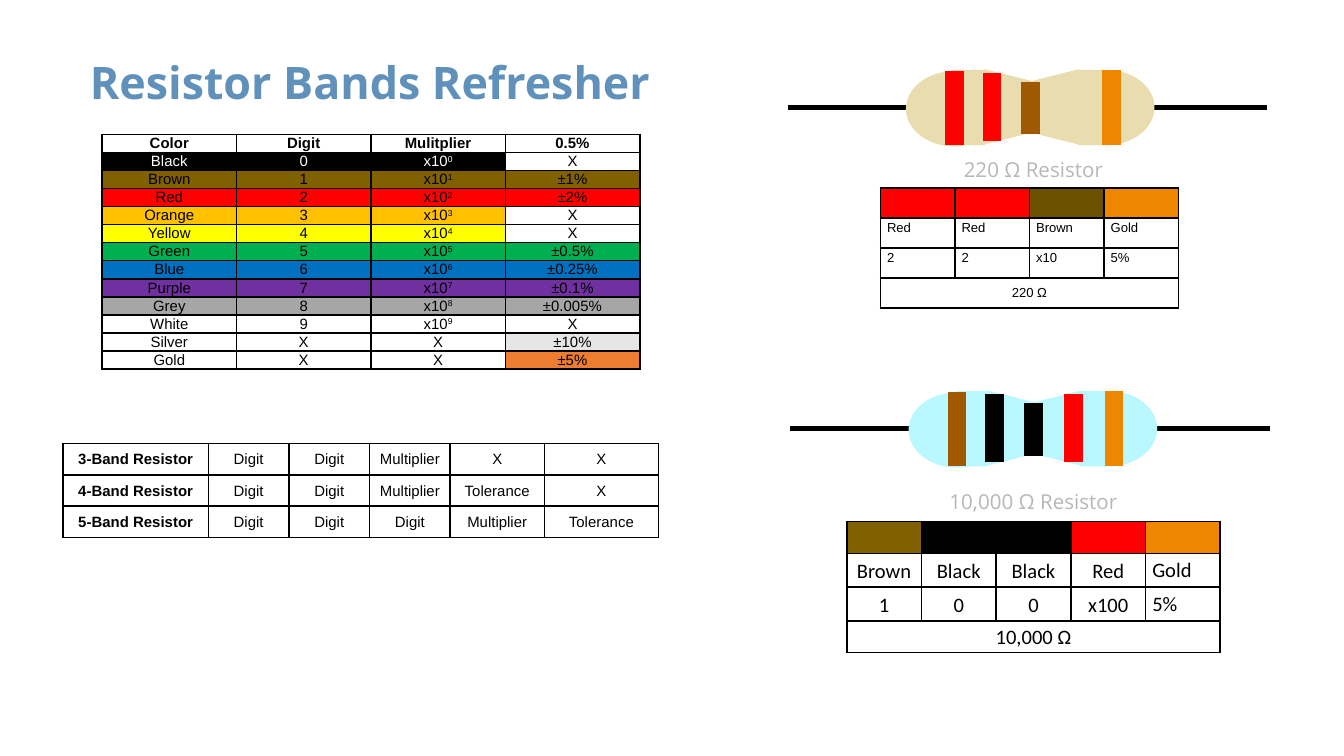
import dataclasses
import typing

import lxml.etree
import pptx
import pptx.dml.color
import pptx.enum.shapes
import pptx.enum.text
import pptx.oxml.ns
import pptx.util

Inches = pptx.util.Inches
Pt = pptx.util.Pt
qn = pptx.oxml.ns.qn
Shape = pptx.enum.shapes.MSO_SHAPE
Align = pptx.enum.text.PP_ALIGN
Anchor = pptx.enum.text.MSO_ANCHOR


class Part(typing.NamedTuple):
    kind: Shape
    left: float
    top: float
    width: float
    height: float
    rotation: int = 0


class Band(typing.NamedTuple):
    x: float
    top: float
    bottom: float


@dataclasses.dataclass
class Cell:
    text: str = ""
    fill: str | None = None
    color: str = "000000"
    bold: bool = False
    align: Align = Align.CENTER
    anchor: Anchor = Anchor.MIDDLE


@dataclasses.dataclass
class Grid:
    left: float
    top: float
    columns: list[float]
    heights: list[float]
    cells: list[list[Cell]]
    size: float
    font: str = "Arial"
    spacing: float = 1.07
    margins: tuple[float, float] = (0.07, 0)
    merge_last: bool = False


@dataclasses.dataclass
class Resistor:
    dx: float
    dy: float
    body: str
    bands: dict[str, str]


BODY = [
    Part(Shape.FLOWCHART_DELAY, 8.02, 0.52, 0.42, 0.56),
    Part(Shape.TRAPEZOID, 7.57, 0.62, 0.56, 0.35, 270),
    Part(Shape.TRAPEZOID, 7.22, 0.62, 0.56, 0.35, 90),
    Part(Shape.FLOWCHART_DELAY, 6.91, 0.52, 0.42, 0.56, 180),
    Part(Shape.OVAL, 7.87, 0.52, 0.72, 0.56),
    Part(Shape.OVAL, 6.74, 0.53, 0.72, 0.56),
]
SLOTS = {
    "first": Band(7.1, 0.53, 1.08),
    "second": Band(7.38, 0.54, 1.05),
    "third": Band(7.67, 0.61, 1),
    "fourth": Band(7.97, 0.54, 1.05),
    "last": Band(8.27, 0.52, 1.08),
}
RESISTORS = [
    Resistor(0, 0, "E9DDAF", {"first": "FF0000", "second": "FF0000", "third": "A05900", "last": "EF8600"}),
    Resistor(0.02, 2.39, "BAF8FF", {"first": "A05900", "second": "000000", "third": "000000",
                                    "last": "EF8600", "fourth": "FF0000"}),
]
CODES = [
    ("Black", "000000", "X"), ("Brown", "806000", "±1%"), ("Red", "FF0000", "±2%"),
    ("Orange", "FFC000", "X"), ("Yellow", "FFFF00", "X"), ("Green", "00B050", "±0.5%"),
    ("Blue", "0070C0", "±0.25%"), ("Purple", "7030A0", "±0.1%"), ("Grey", "A6A6A6", "±0.005%"),
    ("White", None, "X"),
]
METALS = [("Silver", "E7E6E6", "±10%"), ("Gold", "ED7D31", "±5%")]
LAYOUTS = [
    ["3-Band Resistor", "Digit", "Digit", "Multiplier", "X", "X"],
    ["4-Band Resistor", "Digit", "Digit", "Multiplier", "Tolerance", "X"],
    ["5-Band Resistor", "Digit", "Digit", "Digit", "Multiplier", "Tolerance"],
]


def rgb(value: str) -> pptx.dml.color.RGBColor:
    return pptx.dml.color.RGBColor.from_string(value)


def write(frame, text: str, *, size: float, font: str, color: str, bold: bool = False,
          align: Align = Align.LEFT, spacing: float = 1.15) -> None:
    """Write one paragraph, raising whatever follows a caret."""
    paragraph = frame.paragraphs[0]
    paragraph.alignment = align
    paragraph.line_spacing = spacing
    if not text:
        lxml.etree.SubElement(paragraph._p, qn("a:endParaRPr"), sz=str(int(size * 100)))
        return
    for index, piece in enumerate(text.split("^")):
        run = paragraph.add_run()
        run.text = piece
        run.font.size = Pt(size)
        run.font.name = font
        run.font.bold = bold
        run.font.color.rgb = rgb(color)
        if index:
            run.font._element.set("baseline", "30000")


def add_text(slide, left: float, top: float, width: float, height: float, text: str, **style) -> None:
    frame = slide.shapes.add_textbox(Inches(left), Inches(top), Inches(width), Inches(height)).text_frame
    frame.word_wrap = True
    frame.margin_left = frame.margin_right = frame.margin_top = frame.margin_bottom = Inches(0.1)
    write(frame, text, font="Open Sans", **style)


def add_line(shapes, start: tuple[float, float], end: tuple[float, float], color: str, width: float) -> None:
    line = shapes.add_connector(pptx.enum.shapes.MSO_CONNECTOR.STRAIGHT, *map(Inches, start + end))
    line.line.color.rgb = rgb(color)
    line.line.width = Pt(width)
    lxml.etree.SubElement(line._element.spPr, qn("a:effectLst"))


def add_resistor(slide, resistor: Resistor) -> None:
    shapes = slide.shapes.add_group_shape().shapes
    dx, dy = resistor.dx, resistor.dy
    add_line(shapes, (5.86 + dx, 0.8 + dy), (9.43 + dx, 0.8 + dy), "000000", 3)
    for part in BODY:
        shape = shapes.add_shape(part.kind, Inches(part.left + dx), Inches(part.top + dy),
                                 Inches(part.width), Inches(part.height))
        shape.rotation = part.rotation
        shape.shadow.inherit = False
        shape.fill.solid()
        shape.fill.fore_color.rgb = rgb(resistor.body)
        shape.line.fill.background()
    for slot, color in resistor.bands.items():
        band = SLOTS[slot]
        add_line(shapes, (band.x + dx, band.top + dy), (band.x + dx, band.bottom + dy), color, 10)


def style_cell(cell, content: Cell, grid: Grid) -> None:
    cell.margin_left = cell.margin_right = Inches(grid.margins[0])
    cell.margin_top = cell.margin_bottom = Inches(grid.margins[1])
    cell.vertical_anchor = content.anchor
    properties = cell._tc.get_or_add_tcPr()
    for side in ("lnL", "lnR", "lnT", "lnB"):
        border = lxml.etree.SubElement(properties, qn(f"a:{side}"), w=str(Pt(1)))
        solid = lxml.etree.SubElement(border, qn("a:solidFill"))
        lxml.etree.SubElement(solid, qn("a:srgbClr"), val="000000")
    if content.fill:
        cell.fill.solid()
        cell.fill.fore_color.rgb = rgb(content.fill)
    else:
        cell.fill.background()
    write(cell.text_frame, content.text, size=grid.size, font=grid.font, color=content.color,
          bold=content.bold, align=content.align, spacing=grid.spacing)


def add_grid(slide, grid: Grid) -> None:
    table = slide.shapes.add_table(len(grid.heights), len(grid.columns), Inches(grid.left), Inches(grid.top),
                                   Inches(sum(grid.columns)), Inches(sum(grid.heights))).table
    table.first_row = table.horz_banding = False
    for column, width in zip(table.columns, grid.columns):
        column.width = Inches(width)
    for row, height, contents in zip(table.rows, grid.heights, grid.cells):
        row.height = Inches(height)
        for cell, content in zip(row.cells, contents):
            style_cell(cell, content, grid)
    if grid.merge_last:
        last = len(grid.heights) - 1
        table.cell(last, 0).merge(table.cell(last, len(grid.columns) - 1))


def code_rows() -> list[list[Cell]]:
    rows = [[Cell(text, bold=True) for text in ("Color", "Digit", "Mulitplier", "0.5%")]]
    for digit, (name, fill, tolerance) in enumerate(CODES):
        color = "FFFFFF" if name == "Black" else "000000"
        row = [Cell(text, fill, color) for text in (name, str(digit), f"x10^{digit}")]
        rows.append(row + [Cell(tolerance, None if tolerance == "X" else fill)])
    for name, fill, tolerance in METALS:
        rows.append([Cell(name), Cell("X"), Cell("X"), Cell(tolerance, fill)])
    return rows


def value_rows(fills: list[str], names: list[str], values: list[str], total: str, left_from: int) -> list[list[Cell]]:
    rows = [[Cell(fill=fill) for fill in fills]]
    for texts in (names, values):
        rows.append([Cell(text, align=Align.LEFT, anchor=Anchor.TOP) if index >= left_from else Cell(text)
                     for index, text in enumerate(texts)])
    return rows + [[Cell(total)] + [Cell() for _ in fills[1:]]]


def main() -> None:
    presentation = pptx.Presentation()
    presentation.slide_width = Inches(10)
    presentation.slide_height = Inches(10 * 9 / 16)
    slide = presentation.slides.add_slide(presentation.slide_layouts[6])
    caption = dict(size=11, color="B7B7B7", align=Align.CENTER)
    add_text(slide, 0.57, 0.25, 4.92, 0.62, "Resistor Bands Refresher", size=24, color="6091BA", bold=True)
    add_text(slide, 6.49, 1.04, 2.4, 0.63, "220 Ω Resistor", **caption)
    add_grid(slide, Grid(6.55, 1.4, [2.22 / 4] * 4, [0.89 / 4] * 4, value_rows(
        ["FF0000", "FF0000", "6C5200", "EF8600"], ["Red", "Red", "Brown", "Gold"],
        ["2", "2", "x10", "5%"], "220 Ω", 0), 7, spacing=1.0, margins=(0.05, 0.02), merge_last=True))
    for resistor in RESISTORS:
        add_resistor(slide, resistor)
    add_grid(slide, Grid(0.76, 1, [1] * 4, [1.75 / 13] * 13, code_rows(), 8, spacing=1.0))
    layout_rows = [[Cell(text, bold=index == 0) for index, text in enumerate(row)] for row in LAYOUTS]
    add_grid(slide, Grid(0.47, 3.3, [1.08, 0.6, 0.6, 0.6, 0.7, 0.85], [0.7 / 3] * 3, layout_rows, 8))
    add_grid(slide, Grid(6.3, 3.88, [2.78 / 5] * 5, [0.24, 0.25, 0.25, 0.22], value_rows(
        ["806000", "000000", "000000", "FF0000", "EF8600"], ["Brown", "Black", "Black", "Red", "Gold"],
        ["1", "0", "0", "x100", "5%"], "10,000 Ω", 4), 11, "Calibri", margins=(0.05, 0.02), merge_last=True))
    add_text(slide, 6.49, 3.51, 2.4, 0.63, "10,000 Ω Resistor", **caption)
    presentation.save("out.pptx")


if __name__ == "__main__":
    """Build the resistor colour band slide."""
    main()
